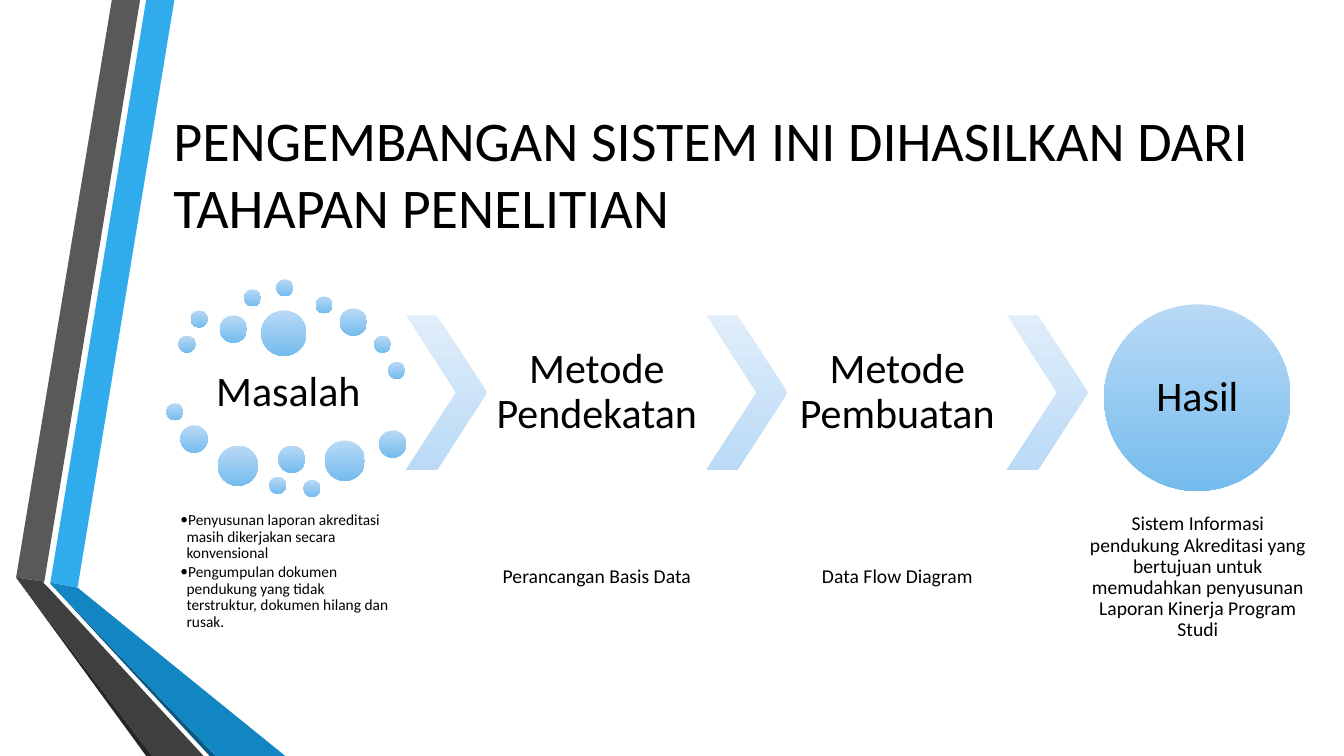
from lxml import etree
from pptx import Presentation
from pptx.dml.color import RGBColor
from pptx.enum.shapes import MSO_SHAPE
from pptx.enum.text import MSO_ANCHOR, MSO_AUTO_SIZE, PP_ALIGN
from pptx.oxml.ns import qn
from pptx.util import Pt

PX = 9144  # 100 px to the inch
OVAL, CHEVRON = MSO_SHAPE.OVAL, MSO_SHAPE.CHEVRON
TOP, MIDDLE = MSO_ANCHOR.TOP, MSO_ANCHOR.MIDDLE
LEFT, CENTER = PP_ALIGN.LEFT, PP_ALIGN.CENTER
FONT = "Calibri"
COLORS = {
    "text": "000000",
    "blue": "30ACEC", "blue_fold": "1186C3", "blue_edge": "0B5982",
    "gray": "595959", "gray_fold": "3F3F3F", "gray_edge": "262626",
    "dot_top": "B9D9F5", "dot_bottom": "75BCEE",
    "arrow_top": "E0EDFA", "arrow_bottom": "BADAF6",
}

# Folded ribbons at the left edge: colour and corner points
RIBBONS = [
    ("blue", [(50, 578), (77, 583), (173, 0), (145, 0)]),
    ("gray", [(139, 0), (111, 0), (16, 573), (44, 577)]),
    ("gray_edge", [(16, 573), (145, 750), (151, 750)]),
    ("blue_edge", [(50, 579), (208, 750), (214, 750)]),
    ("blue_fold", [(50, 579), (214, 750), (283, 750), (77, 583), (50, 578)]),
    ("gray_fold", [(202, 750), (48, 583), (43, 578), (44, 577), (16, 573), (151, 750)]),
]

# Dots around the problem: diameter and top left corners
DOTS = {
    17: [(177, 333), (189, 308), (242, 287), (274, 277), (313, 294), (371, 333),
         (385, 359), (165, 400), (267, 473), (301, 476)],
    27: [(218, 313), (337, 306), (179, 422), (276, 442), (376, 427)],
    40: [(216, 442), (322, 437)],
    45: [(259, 308)],
}

# Stages of the process
FIRST_LEFT, STAGE_WIDTH, ARROW_WIDTH = 177, 218, 80
STAGE_STEP = STAGE_WIDTH + ARROW_WIDTH
FIRST_ARROW = 403
STAGE_TOP, STAGE_HEIGHT = 313, 153
NOTE_TOP, NOTE_HEIGHT = 506, 134
PROBLEMS = [
    "Penyusunan laporan akreditasi masih dikerjakan secara konvensional",
    "Pengumpulan dokumen pendukung yang tidak terstruktur, dokumen hilang dan rusak.",
]
METHODS = [
    ("Metode Pendekatan", "Perancangan Basis Data"),
    ("Metode Pembuatan", "Data Flow Diagram"),
]
RESULT = ("Sistem Informasi pendukung Akreditasi yang bertujuan untuk memudahkan "
          "penyusunan Laporan Kinerja Program Studi")


def color(name):
    return RGBColor.from_string(COLORS[name])


def place(shape, left, top, width, height):
    shape.left, shape.top = left * PX, top * PX
    shape.width, shape.height = width * PX, height * PX


def set_frame(frame, anchor, side, vertical):
    frame.word_wrap = True
    frame.auto_size = MSO_AUTO_SIZE.NONE
    frame.vertical_anchor = anchor
    frame.margin_left = frame.margin_right = side * PX
    frame.margin_top = frame.margin_bottom = vertical * PX


def add_run(paragraph, text, size):
    run = paragraph.add_run()
    run.text = text
    run.font.name = FONT
    run.font.size = Pt(size)
    run.font.color.rgb = color("text")


def add_ribbon(slide, fill, points):
    builder = slide.shapes.build_freeform(*points[0], scale=PX)
    builder.add_line_segments(points[1:], close=True)
    shape = builder.convert_to_shape()
    shape.shadow.inherit = False
    shape.fill.solid()
    shape.fill.fore_color.rgb = color(fill)
    shape.line.fill.background()


def add_gradient_shape(slide, kind, box, tone):
    shape = slide.shapes.add_shape(kind, *(length * PX for length in box))
    shape.shadow.inherit = False
    shape.line.fill.background()
    shape.fill.gradient()
    shape.fill.gradient_angle = 270
    for stop, end in zip(shape.fill.gradient_stops, ("top", "bottom")):
        stop.color.rgb = color(f"{tone}_{end}")
    return shape


def add_arrow(slide, left):
    box = (left, STAGE_TOP, ARROW_WIDTH, STAGE_HEIGHT)
    arrow = add_gradient_shape(slide, CHEVRON, box, "arrow")
    arrow.adjustments[0] = 0.62


def add_label(slide, text, box, size, margin):
    shape = slide.shapes.add_textbox(*(length * PX for length in box))
    set_frame(shape.text_frame, MIDDLE, margin, margin)
    paragraph = shape.text_frame.paragraphs[0]
    paragraph.alignment = CENTER
    paragraph.line_spacing = 0.9
    add_run(paragraph, text, size)


def add_note(slide, text, left):
    add_label(slide, text, (left, NOTE_TOP, STAGE_WIDTH, NOTE_HEIGHT), 14, 2)


def add_bullet(paragraph):
    properties = paragraph._p.get_or_add_pPr()
    properties.set("marL", str(6 * PX))
    properties.set("indent", str(-8 * PX))
    bullet_color = etree.SubElement(properties, qn("a:buClr"))
    etree.SubElement(bullet_color, qn("a:srgbClr"), val=COLORS["text"])
    etree.SubElement(properties, qn("a:buFont"), typeface=FONT)
    etree.SubElement(properties, qn("a:buChar"), char="•")


def fill_title(title):
    place(title, 162, 75, 1096, 192)
    set_frame(title.text_frame, MIDDLE, 10, 5)
    paragraph = title.text_frame.paragraphs[0]
    paragraph.alignment = LEFT
    add_run(paragraph, "PENGEMBANGAN SISTEM INI DIHASILKAN DARI TAHAPAN PENELITIAN", 40)


def fill_problems(body):
    place(body, FIRST_LEFT, NOTE_TOP, STAGE_WIDTH, NOTE_HEIGHT)
    frame = body.text_frame
    set_frame(frame, TOP, 2, 2)
    for index, text in enumerate(PROBLEMS):
        paragraph = frame.add_paragraph() if index else frame.paragraphs[0]
        paragraph.level = 1
        add_bullet(paragraph)
        paragraph.alignment = LEFT
        paragraph.line_spacing = 0.9
        paragraph.space_before = Pt(1.6 if index else 0)
        add_run(paragraph, text, 11)


def main():
    presentation = Presentation()
    presentation.slide_width, presentation.slide_height = 1333 * PX, 750 * PX
    slide = presentation.slides.add_slide(presentation.slide_layouts[1])

    # Ribbons and title
    for fill, points in RIBBONS:
        add_ribbon(slide, fill, points)
    fill_title(slide.shapes.title)

    # Problem
    add_label(slide, "Masalah", (FIRST_LEFT, 354, STAGE_WIDTH, 72), 30, 4)
    fill_problems(slide.placeholders[1])
    for diameter, corners in DOTS.items():
        for left, top in corners:
            add_gradient_shape(slide, OVAL, (left, top, diameter, diameter), "dot")

    # Methods, with an arrow before each stage
    for index in range(len(METHODS) + 1):
        add_arrow(slide, FIRST_ARROW + index * STAGE_STEP)
    for index, (heading, note) in enumerate(METHODS):
        left = FIRST_ARROW + ARROW_WIDTH + index * STAGE_STEP
        add_label(slide, heading, (left, STAGE_TOP, STAGE_WIDTH, STAGE_HEIGHT), 30, 4)
        add_note(slide, note, left)

    # Result
    add_gradient_shape(slide, OVAL, (1095, 302, 185, 185), "dot")
    add_label(slide, "Hasil", (1122, 329, 131, 131), 30, 0)
    add_note(slide, RESULT, FIRST_ARROW + ARROW_WIDTH + len(METHODS) * STAGE_STEP)

    presentation.save("out.pptx")


if __name__ == "__main__":
    main()
